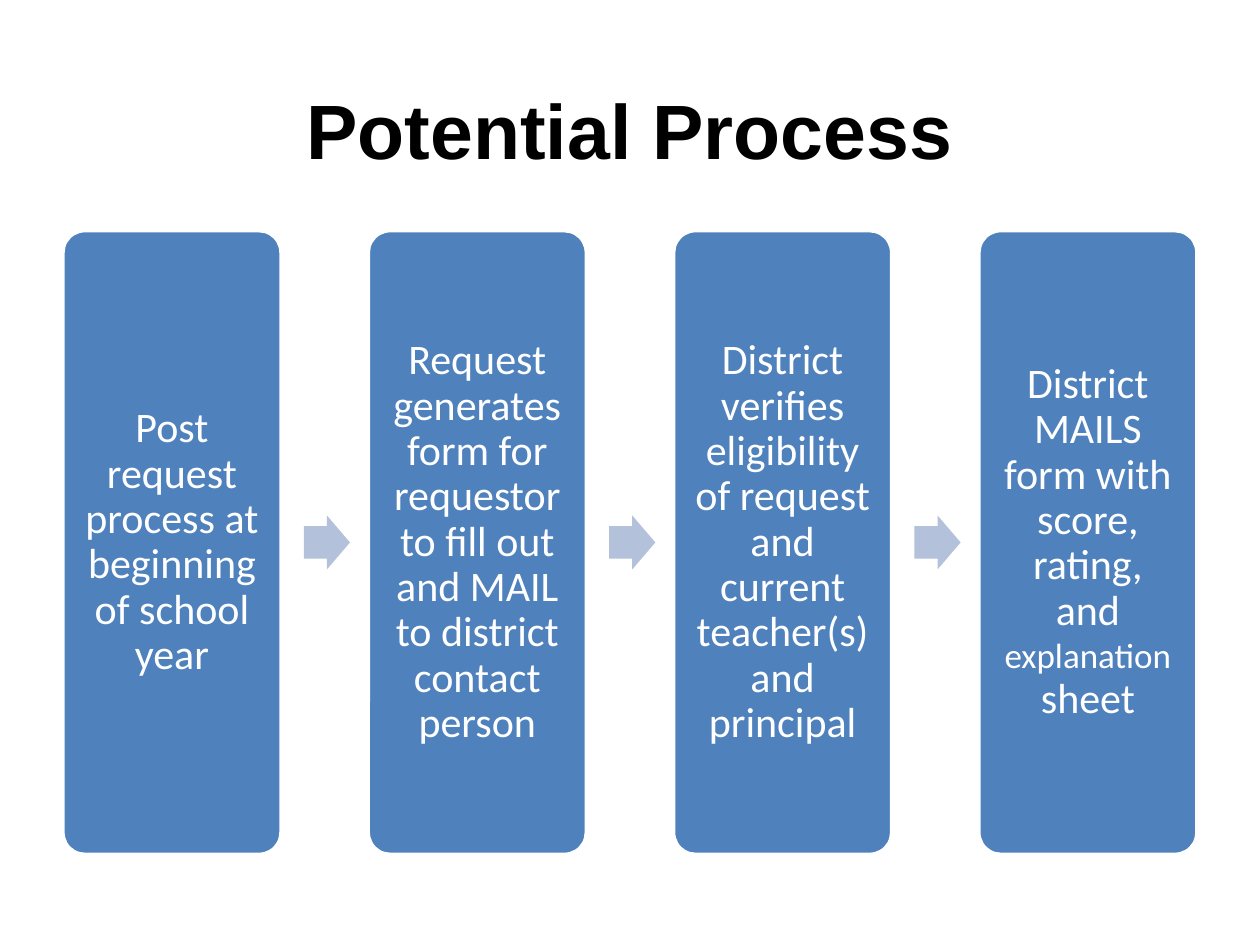
import pptx
import pptx.util
import pptx.dml.color
import pptx.enum.shapes
import pptx.enum.text

Pt = pptx.util.Pt
RGBColor = pptx.dml.color.RGBColor
SHAPE = pptx.enum.shapes.MSO_SHAPE
CENTER = pptx.enum.text.PP_ALIGN.CENTER
MIDDLE = pptx.enum.text.MSO_ANCHOR.MIDDLE

# Content: each step is a list of (text, size) runs
HEADING = "Potential Process"
STEPS = [
    [("Post request process at beginning of school year", 24)],
    [("Request generates form for requestor to fill out and MAIL "
      "to district contact person", 24)],
    [("District verifies eligibility of request and current teacher(s) "
      "and principal", 24)],
    [("District MAILS form with score, rating, and ", 24),
     ("explanation", 20), (" ", 23), ("sheet", 24)],
]

# Colours
BLACK = RGBColor(0x00, 0x00, 0x00)
WHITE = RGBColor(0xFF, 0xFF, 0xFF)
BLUE = RGBColor(0x4F, 0x81, 0xBD)
PALE_BLUE = RGBColor(0xB3, 0xC1, 0xDB)

# Layout in points
LEFT, FLOW_WIDTH = 36, 648
STEP_TOP, STEP_WIDTH, STEP_HEIGHT = 131.8, 124.6, 356.4
ARROW_WIDTH, ARROW_HEIGHT, ARROW_GAP = 26.4, 30.9, 13
STEP_PITCH = (FLOW_WIDTH - STEP_WIDTH) / (len(STEPS) - 1)
INSET = 7.2


def add_run(paragraph, text, size, font_name, color):
    run = paragraph.add_run()
    run.text = text
    run.font.size = Pt(size)
    run.font.name = font_name
    run.font.color.rgb = color
    return run


def add_filled(slide, kind, left, top, width, height, color):
    shape = slide.shapes.add_shape(kind, Pt(left), Pt(top), Pt(width), Pt(height))
    shape.shadow.inherit = False
    shape.fill.solid()
    shape.fill.fore_color.rgb = color
    shape.line.fill.background()
    return shape


def add_step(slide, left, runs):
    step = add_filled(slide, SHAPE.ROUNDED_RECTANGLE, left, STEP_TOP,
                      STEP_WIDTH, STEP_HEIGHT, BLUE)
    step.adjustments[0] = 0.1
    step.line.color.rgb = WHITE
    step.line.width = Pt(2)
    frame = step.text_frame
    frame.word_wrap = True
    frame.vertical_anchor = MIDDLE
    frame.margin_left = frame.margin_right = Pt(INSET)
    frame.margin_top = frame.margin_bottom = Pt(INSET)
    paragraph = frame.paragraphs[0]
    paragraph.alignment = CENTER
    paragraph.line_spacing = 0.9
    for text, size in runs:
        add_run(paragraph, text, size, "Calibri", WHITE)


def add_arrow(slide, left):
    top = STEP_TOP + (STEP_HEIGHT - ARROW_HEIGHT) / 2
    arrow = add_filled(slide, SHAPE.RIGHT_ARROW, left, top,
                       ARROW_WIDTH, ARROW_HEIGHT, PALE_BLUE)
    arrow.adjustments[0] = 0.6
    arrow.adjustments[1] = 0.5


def main():
    deck = pptx.Presentation()
    deck.slide_width, deck.slide_height = Pt(720), Pt(540)
    slide = deck.slides.add_slide(deck.slide_layouts[5])

    # Title
    title = slide.shapes.title
    title.left, title.top = Pt(LEFT), Pt(28.8)
    title.width, title.height = Pt(FLOW_WIDTH), Pt(90)
    title.text_frame.vertical_anchor = MIDDLE
    paragraph = title.text_frame.paragraphs[0]
    paragraph.alignment = CENTER
    add_run(paragraph, HEADING, 44, "Arial", BLACK).font.bold = True

    # Steps, with an arrow between neighbours
    for index, runs in enumerate(STEPS):
        left = LEFT + index * STEP_PITCH
        add_step(slide, left, runs)
        if index < len(STEPS) - 1:
            add_arrow(slide, left + STEP_WIDTH + ARROW_GAP)

    deck.save("out.pptx")


if __name__ == "__main__":
    main()
